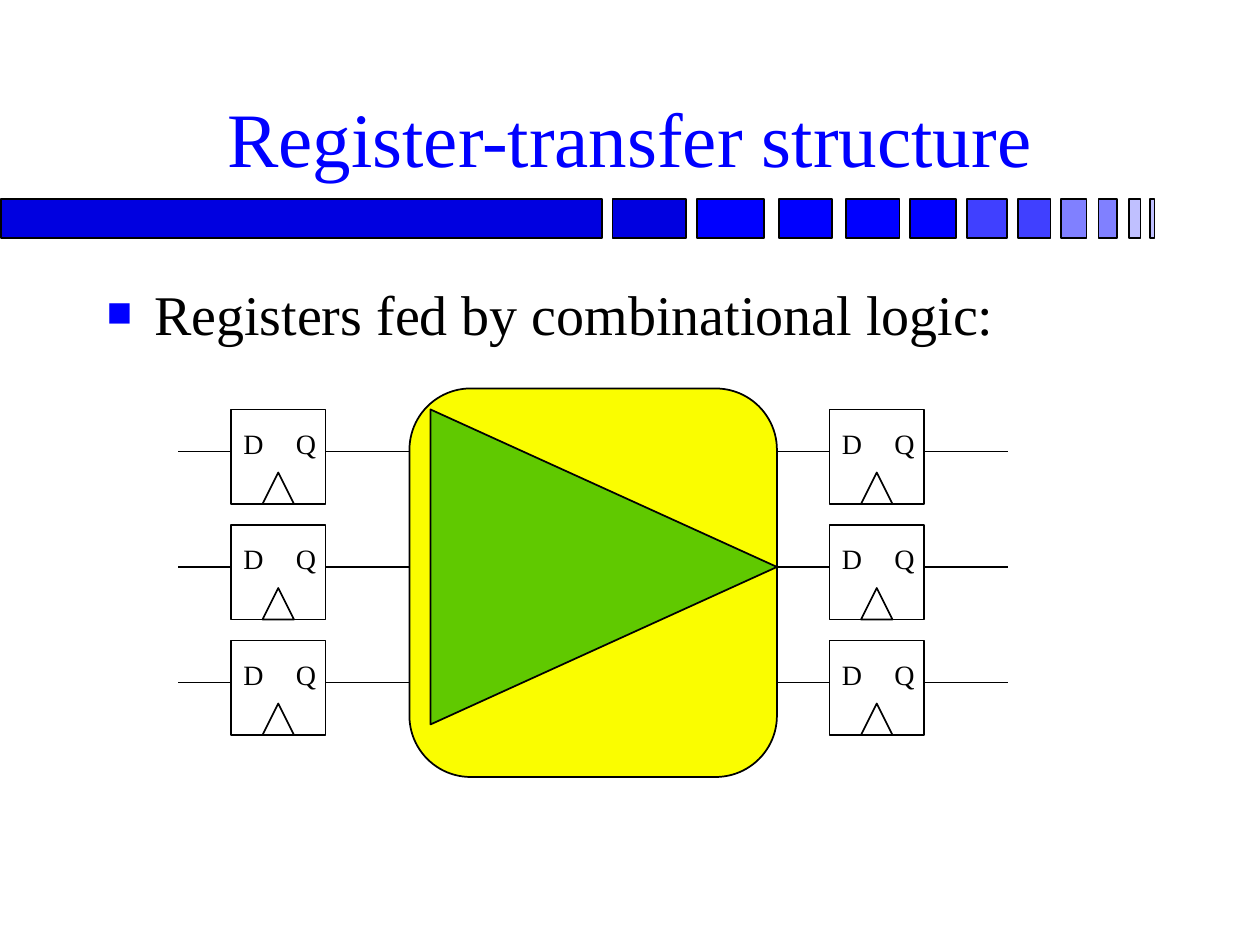
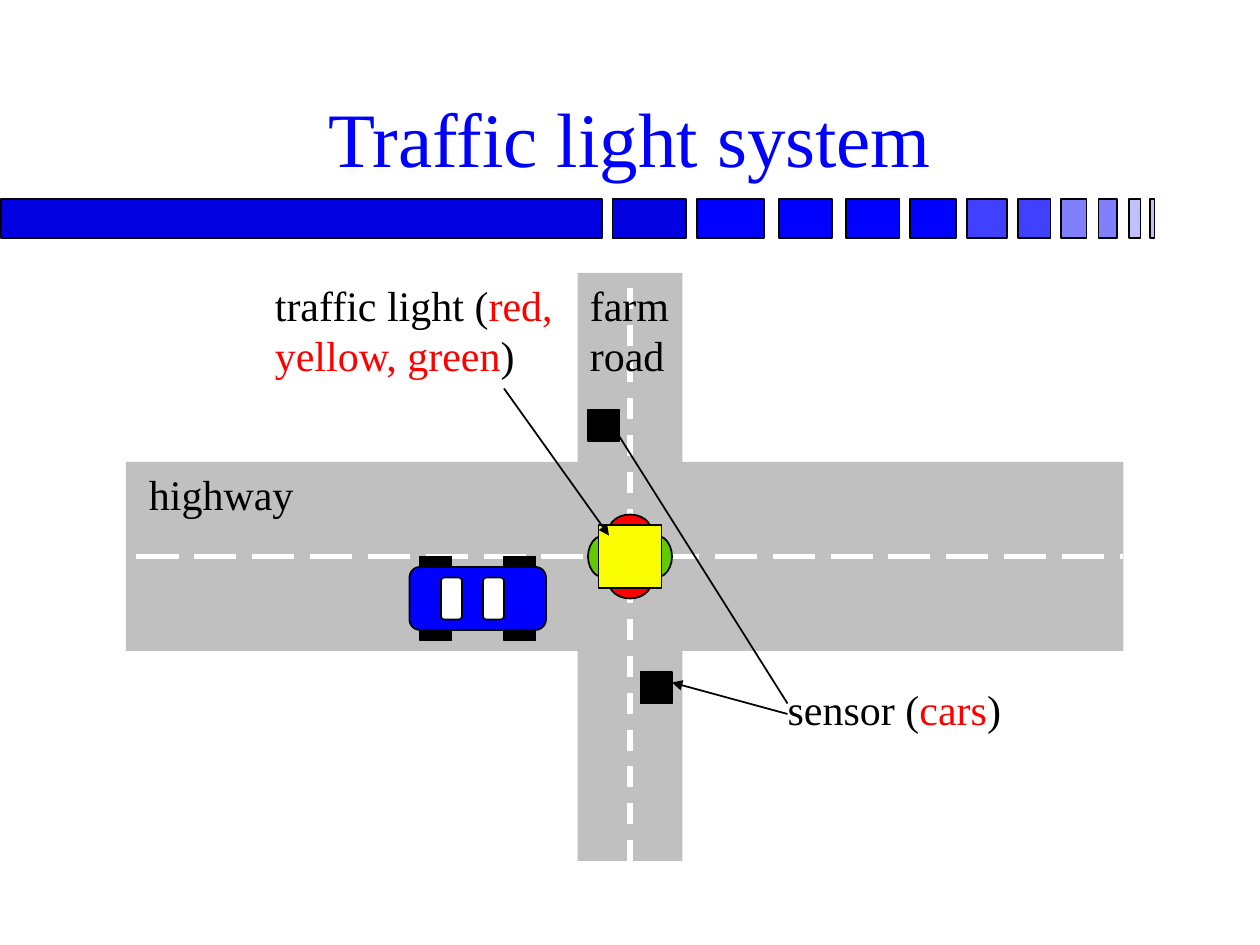
from lxml.etree import SubElement
from pptx import Presentation
from pptx.dml.color import RGBColor
from pptx.enum.dml import MSO_LINE
from pptx.enum.shapes import MSO_CONNECTOR, MSO_SHAPE
from pptx.enum.text import MSO_ANCHOR, PP_ALIGN
from pptx.oxml.ns import qn
from pptx.util import Pt

FONT = "Times New Roman"
BLACK = RGBColor(0x00, 0x00, 0x00)
WHITE = RGBColor(0xFF, 0xFF, 0xFF)
BLUE = RGBColor(0x00, 0x00, 0xFF)
DARK_BLUE = RGBColor(0x00, 0x00, 0xE0)
MID_BLUE = RGBColor(0x40, 0x40, 0xFF)
PALE_BLUE = RGBColor(0x80, 0x80, 0xFF)
FAINT_BLUE = RGBColor(0xC0, 0xC0, 0xFF)
RED = RGBColor(0xFF, 0x00, 0x00)
GREEN = RGBColor(0x60, 0xC9, 0x00)
YELLOW = RGBColor(0xFA, 0xFD, 0x00)
GREY = RGBColor(0xC0, 0xC0, 0xC0)

# Left, width and colour of each block of the fading band
BAND_BLOCKS = [
    (0.5, 343.5, DARK_BLUE), (350, 42.25, DARK_BLUE),
    (398.25, 38.5, BLUE), (445, 30.5, BLUE), (483.5, 30.5, BLUE), (520, 26.5, BLUE),
    (552.75, 22.75, MID_BLUE), (581.75, 18.5, MID_BLUE),
    (606.25, 14.75, PALE_BLUE), (627.75, 10.75, PALE_BLUE),
    (645.25, 6.5, FAINT_BLUE), (657, 2.75, FAINT_BLUE),
]


# Basic parts
def add_block(shapes, kind, left, top, width, height, fill, outline=BLACK):
    block = shapes.add_shape(kind, Pt(left), Pt(top), Pt(width), Pt(height))
    block.shadow.inherit = False
    block.fill.solid()
    block.fill.fore_color.rgb = fill
    if outline is None:
        block.line.fill.background()
    else:
        block.line.color.rgb = outline
        block.line.width = Pt(1)
    return block


def add_line(shapes, start, end, color=BLACK, width=1, dash=None, arrow=False):
    line = shapes.add_connector(MSO_CONNECTOR.STRAIGHT, *(Pt(n) for n in (*start, *end)))
    line.line.color.rgb = color
    line.line.width = Pt(width)
    if dash is not None:
        line.line.dash_style = dash
    properties = line._element.spPr
    if arrow:
        SubElement(properties.find(qn("a:ln")), qn("a:tailEnd"), type="triangle")
    SubElement(properties, qn("a:effectLst"))
    return line


def add_text(shapes, left, top, width, height, spans, size, wrap=True):
    box = shapes.add_textbox(Pt(left), Pt(top), Pt(width), Pt(height))
    box.text_frame.word_wrap = wrap
    para = box.text_frame.paragraphs[0]
    for text, color in spans:
        span = para.add_run()
        span.text = text
        span.font.name = FONT
        span.font.size = Pt(size)
        span.font.color.rgb = color
    return box


# Shared frame: title and fading band
def add_page(deck, title):
    page = deck.slides.add_slide(deck.slide_layouts[6])
    page.background.fill.solid()
    page.background.fill.fore_color.rgb = WHITE
    band = page.shapes.add_group_shape()
    for left, width, color in reversed(BAND_BLOCKS):
        add_block(band.shapes, MSO_SHAPE.RECTANGLE, left, 113.75, width, 22.5, color)
    box = add_text(page.shapes, 54, 15, 612, 93, [(title, BLUE)], 44)
    box.text_frame.vertical_anchor = MSO_ANCHOR.BOTTOM
    box.text_frame.paragraphs[0].alignment = PP_ALIGN.CENTER
    return page


def add_bullet(shapes, left, top, width, height, text):
    box = add_text(shapes, left, top, width, height, [(text, BLACK)], 32)
    para = box.text_frame.paragraphs[0]
    para.space_before = Pt(4)
    properties = para._p.get_or_add_pPr()
    properties.set("marL", str(Pt(27)))
    properties.set("indent", str(-Pt(27)))
    bullet_color = SubElement(properties, qn("a:buClr"))
    SubElement(bullet_color, qn("a:srgbClr"), val=str(BLUE))
    SubElement(properties, qn("a:buSzPct"), val="75000")
    SubElement(properties, qn("a:buFont"), typeface=FONT)
    SubElement(properties, qn("a:buChar"), char="■")


# Register with its input and output wires
def add_register(shapes, left, top):
    side, wire_y = 54, top + 24
    register = shapes.add_group_shape().shapes
    add_block(register, MSO_SHAPE.RECTANGLE, left, top, side, side, WHITE)
    add_block(register, MSO_SHAPE.ISOSCELES_TRIANGLE, left + 18, top + 36, 18, 18, WHITE)
    for name, offset in (("D", 0), ("Q", 30)):
        add_text(register, left + offset, top + 6, 26, 26.6, [(name, BLACK)], 16, wrap=False)
    add_line(shapes, (left - 30, wire_y), (left, wire_y))
    add_line(shapes, (left + side, wire_y), (left + side + 48, wire_y))


def add_register_diagram(shapes, left, top):
    add_block(shapes, MSO_SHAPE.ROUNDED_RECTANGLE, left + 132, top, 210, 222, YELLOW)
    for column in (30, 372):
        for row in range(3):
            add_register(shapes, left + column, top + 12 + 66 * row)
    logic = add_block(shapes, MSO_SHAPE.ISOSCELES_TRIANGLE,
                      left + 153, top + 3, 180, 198, GREEN)
    logic.rotation = 90


# Crossing roads with dashed centre lines
def add_roads(shapes, left, top):
    highway = add_block(shapes, MSO_SHAPE.RECTANGLE, left, top + 108, 570, 108, GREY, None)
    farm_road = add_block(shapes, MSO_SHAPE.RECTANGLE, left + 258, top, 60, 336, GREY, None)
    highway_line = add_line(shapes, (left + 6, top + 162), (left + 570, top + 162),
                            WHITE, 3, MSO_LINE.LONG_DASH)
    highway_line.end_connect(highway, 3)
    farm_line = add_line(shapes, (left + 288, top + 336), (left + 288, top),
                         WHITE, 3, MSO_LINE.DASH)
    farm_line.begin_connect(farm_road, 2)
    farm_line.end_connect(farm_road, 0)


def add_traffic_light(shapes, left, top):
    light = shapes.add_group_shape().shapes
    for offset in (0, 30):
        add_block(light, MSO_SHAPE.OVAL, left + 12, top + offset, 24, 18, RED)
        add_block(light, MSO_SHAPE.OVAL, left + offset, top + 12, 18, 24, GREEN)
    add_block(light, MSO_SHAPE.RECTANGLE, left + 6, top + 6, 36, 36, YELLOW)


def add_car(shapes, left, top):
    car = shapes.add_group_shape().shapes
    add_block(car, MSO_SHAPE.ROUNDED_RECTANGLE, left, top + 6, 78, 36, BLUE)
    for wheel_x in (6, 54):
        for wheel_y in (0, 42):
            add_block(car, MSO_SHAPE.RECTANGLE, left + wheel_x, top + wheel_y, 18, 6, BLACK)
    for window_x in (18, 42):
        add_block(car, MSO_SHAPE.ROUNDED_RECTANGLE, left + window_x, top + 12, 12, 24, WHITE)


def add_crossing(shapes, left, top):
    add_roads(shapes, left, top)
    add_traffic_light(shapes, left + 264, top + 138)
    add_car(shapes, left + 162, top + 162)
    # Sensors
    for x, y in ((264, 78), (294, 228)):
        add_block(shapes, MSO_SHAPE.RECTANGLE, left + x, top + y, 18, 18, BLACK)
    # Labels
    add_text(shapes, left + 6, top + 108, 97, 36, [("highway", BLACK)], 24, wrap=False)
    add_text(shapes, left + 258, top, 60.5, 66, [("farm road", BLACK)], 24)
    add_text(shapes, left + 371, top + 231.25, 137.5, 36,
             [("sensor (", BLACK), ("cars", RED), (")", BLACK)], 24, wrap=False)
    add_text(shapes, left + 78, top, 180, 66,
             [("traffic light (", BLACK), ("red, yellow, green", RED), (")", BLACK)], 24)
    # Arrows from the labels
    for x1, y1, x2, y2 in ((378, 252, 312, 234), (378, 246, 276, 84), (216, 66, 276, 150)):
        add_line(shapes, (left + x1, top + y1), (left + x2, top + y2), arrow=True)


def main():
    deck = Presentation()
    deck.slide_width, deck.slide_height = Pt(720), Pt(540)

    page = add_page(deck, "Register-transfer structure")
    add_bullet(page.shapes, 54, 156, 612, 54, "Registers fed by combinational logic:")
    add_register_diagram(page.shapes, 102, 222)

    page = add_page(deck, "Traffic light system")
    add_crossing(page.shapes, 72, 156)

    deck.save("out.pptx")


if __name__ == "__main__":
    main()
